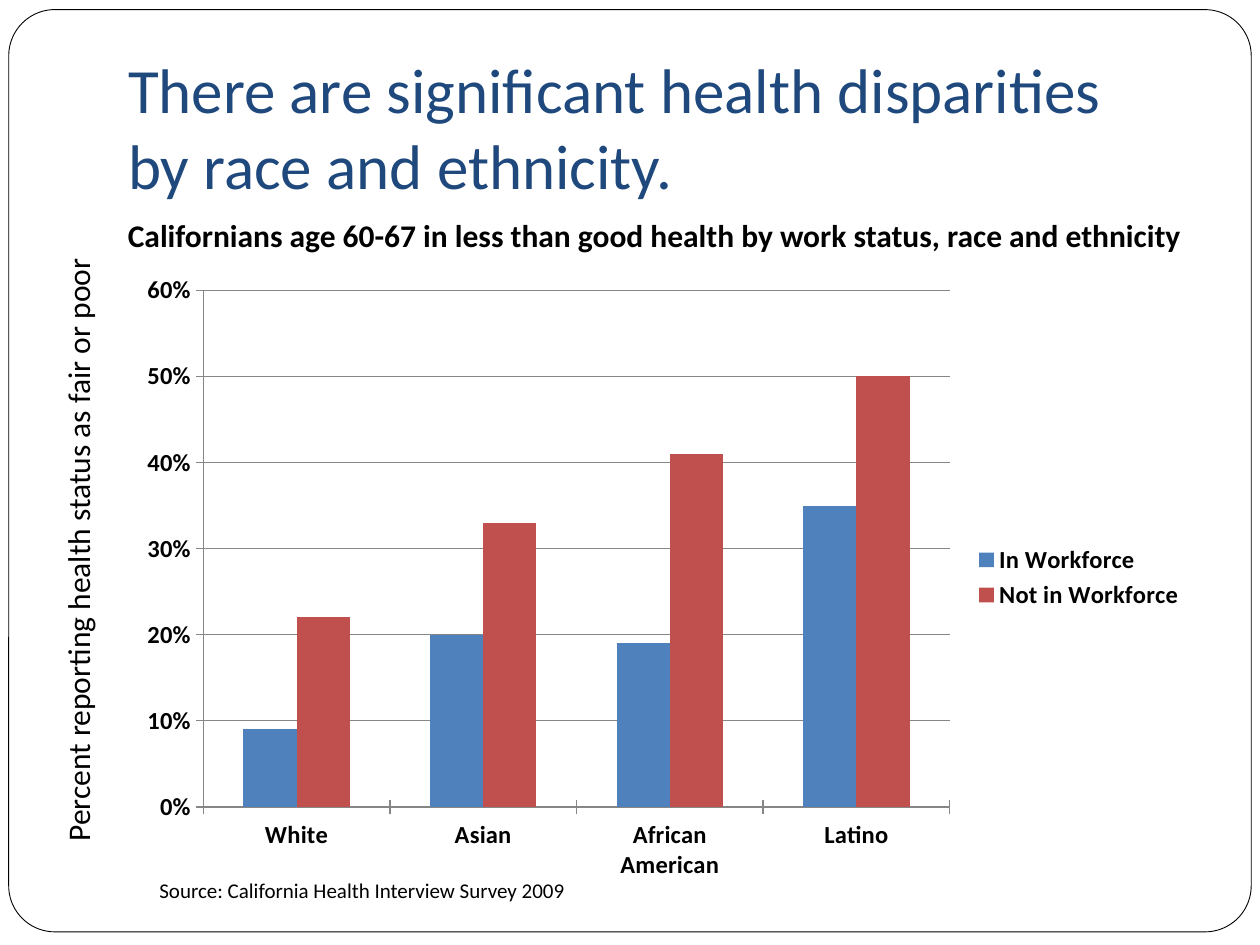
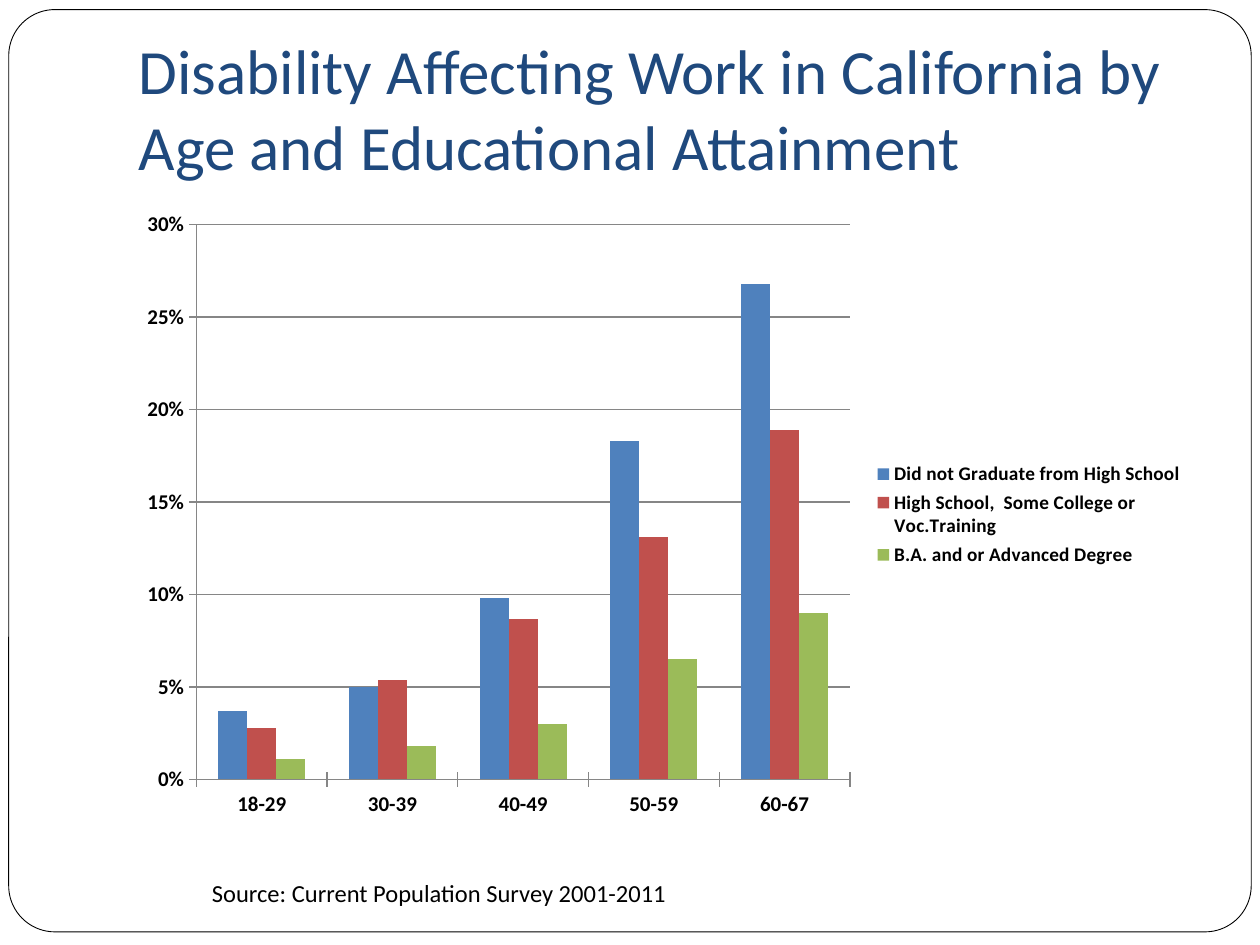
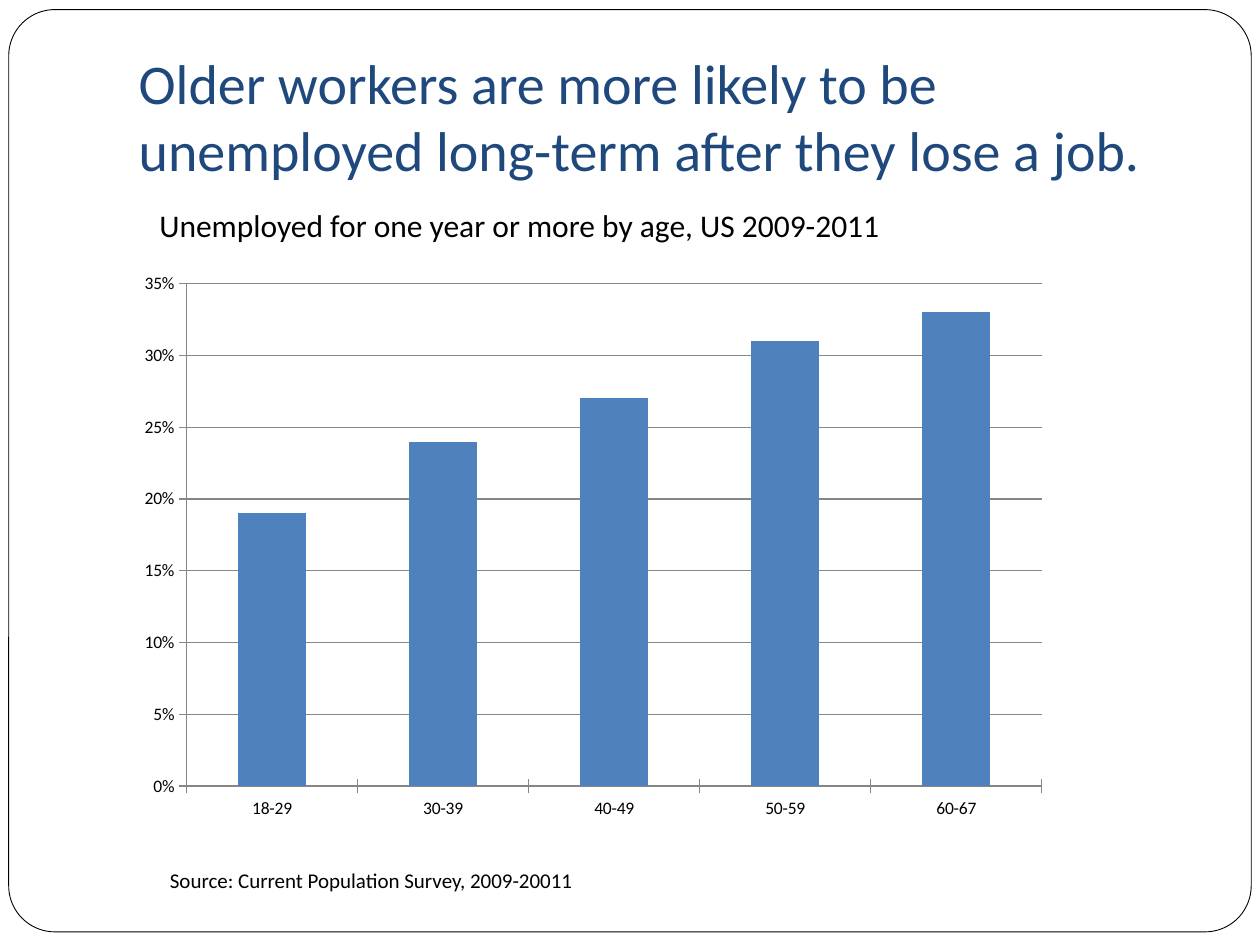
from pptx import Presentation
from pptx.chart.data import CategoryChartData
from pptx.dml.color import RGBColor
from pptx.enum.chart import XL_CHART_TYPE, XL_LEGEND_POSITION, XL_TICK_MARK
from pptx.enum.shapes import MSO_SHAPE
from pptx.enum.text import MSO_ANCHOR, MSO_AUTO_SIZE, PP_ALIGN
from pptx.util import Pt

COLUMNS = XL_CHART_TYPE.COLUMN_CLUSTERED
LEGEND_RIGHT = XL_LEGEND_POSITION.RIGHT
TICK_CROSS = XL_TICK_MARK.CROSS
ROUNDED = MSO_SHAPE.ROUNDED_RECTANGLE
BOTTOM = MSO_ANCHOR.BOTTOM
FIXED_SIZE = MSO_AUTO_SIZE.NONE
GROW = MSO_AUTO_SIZE.SHAPE_TO_FIT_TEXT
LEFT = PP_ALIGN.LEFT

TITLE_ONLY = 5
FRAME_ID = 20
FONT = "Calibri"
COLORS = {
    "paper": "FFFFFF",
    "ink": "000000",
    "title": "1F497D",
    "grid": "868686",
    "blue": "4F81BD",
    "red": "C0504D",
    "green": "9BBB59",
}
SERIES_COLORS = ("blue", "red", "green")
AGE_GROUPS = ("18-29", "30-39", "40-49", "50-59", "60-67")
TITLE_BOX = (72, 21.6, 612, 90)


def color(name):
    return RGBColor.from_string(COLORS[name])


def points(box):
    return [Pt(length) for length in box]


def style_font(font, size, bold=False, color_name="ink"):
    font.name = FONT
    font.size = Pt(size)
    font.bold = bold
    font.color.rgb = color(color_name)


def write(text_frame, text, size=18, bold=False, color_name="ink"):
    paragraph = text_frame.paragraphs[0]
    paragraph.alignment = LEFT
    run = paragraph.add_run()
    run.text = text
    style_font(run.font, size, bold, color_name)


class Deck:
    def __init__(self):
        self.presentation = Presentation()
        self.presentation.slide_width = Pt(720)
        self.presentation.slide_height = Pt(540)
        self.layout = self.presentation.slide_layouts[TITLE_ONLY]
        self.slide = None

    def add_slide(self, title, box=TITLE_BOX, size=36):
        is_first = self.slide is None
        self.slide = self.presentation.slides.add_slide(self.layout)
        if is_first:
            self.add_frame_to_layout()
        shape = self.slide.shapes.title
        shape.left, shape.top, shape.width, shape.height = points(box)
        text_frame = shape.text_frame
        text_frame.word_wrap = True
        text_frame.auto_size = FIXED_SIZE
        text_frame.vertical_anchor = BOTTOM
        text_frame.margin_bottom = Pt(7.2)
        write(text_frame, title, size=size, color_name="title")

    def add_frame_to_layout(self):
        frame = self.slide.shapes.add_shape(ROUNDED, *points((5, 5.5, 710, 527)))
        frame.adjustments[0] = 0.05
        frame.shadow.inherit = False
        frame.fill.solid()
        frame.fill.fore_color.rgb = color("paper")
        frame.line.color.rgb = color("ink")
        frame.line.width = Pt(0.5)
        frame.element.nvSpPr.cNvPr.id = FRAME_ID
        self.layout.shapes.element.insert(2, frame.element)

    def add_text(self, text, box, upward=False, **text_format):
        text_frame = self.slide.shapes.add_textbox(*points(box)).text_frame
        text_frame.word_wrap = False
        text_frame.auto_size = GROW
        if upward:
            text_frame._txBody.bodyPr.set("vert", "vert270")
        write(text_frame, text, **text_format)

    def add_chart(self, box, categories, series, maximum, step, size, bold=False, legend_size=None):
        data = CategoryChartData(number_format="0%")
        data.categories = categories
        for name, values in series.items():
            data.add_series(name, values)
        chart = self.slide.shapes.add_chart(COLUMNS, *points(box), data).chart
        chart.has_title = False
        style_font(chart.font, size, bold)

        plot = chart.plots[0]
        plot.gap_width = 150
        plot.overlap = 0
        plot.vary_by_categories = False
        for column, color_name in zip(plot.series, SERIES_COLORS):
            column.format.fill.solid()
            column.format.fill.fore_color.rgb = color(color_name)

        value_axis = chart.value_axis
        value_axis.minimum_scale = 0
        value_axis.maximum_scale = maximum
        value_axis.major_unit = step
        value_axis.has_major_gridlines = True
        value_axis.tick_labels.number_format = "0%"
        value_axis.tick_labels.number_format_is_linked = False
        for axis in (chart.category_axis, value_axis):
            axis.major_tick_mark = TICK_CROSS
            style_font(axis.tick_labels.font, size, bold)
        for part in (chart.category_axis, value_axis, value_axis.major_gridlines):
            part.format.line.color.rgb = color("grid")
            part.format.line.width = Pt(0.75)

        chart.has_legend = legend_size is not None
        if chart.has_legend:
            chart.legend.position = LEGEND_RIGHT
            chart.legend.include_in_layout = False
            style_font(chart.legend.font, legend_size, bold)


def add_health_disparities(deck):
    deck.add_slide("There are significant health disparities by race and ethnicity.",
                   box=(66, 60, 612, 62.5))
    deck.add_chart(
        (72, 150, 612, 360),
        ("White", "Asian", "African American", "Latino"),
        {"In Workforce": (0.09, 0.2, 0.19, 0.35),
         "Not in Workforce": (0.22, 0.33, 0.41, 0.5)},
        maximum=0.6, step=0.1, size=14, bold=True, legend_size=14)
    deck.add_text("Source: California Health Interview Survey 2009",
                  (84, 498, 248.5, 21.6), size=12)
    deck.add_text("Californians age 60-67 in less than good health by work status, race and ethnicity",
                  (66, 120, 617, 29), bold=True)
    deck.add_text("Percent reporting health status as fair or poor",
                  (30, 144, 36, 344), upward=True)


def add_disability(deck):
    deck.add_slide("Disability Affecting Work in California by Age and Educational Attainment")
    deck.add_chart(
        (72, 114, 612, 360),
        AGE_GROUPS,
        {"Did not Graduate from High School": (0.037, 0.05, 0.098, 0.183, 0.268),
         "High School,  Some College or Voc.Training": (0.028, 0.054, 0.087, 0.131, 0.189),
         "B.A. and or Advanced Degree": (0.011, 0.018, 0.03, 0.065, 0.09)},
        maximum=0.3, step=0.05, size=12, bold=True, legend_size=11)
    deck.add_text("Source: Current Population Survey 2001-2011",
                  (114, 498, 276.5, 24.5), size=14)


def add_unemployment(deck):
    deck.add_slide("Older workers are more likely to be unemployed long-term after they lose a job.",
                   size=32)
    deck.add_text("Source: Current Population Survey, 2009-20011",
                  (90, 492, 247, 21.6), size=12)
    deck.add_chart(
        (72, 150, 534, 324),
        AGE_GROUPS,
        {"Series 1": (0.19, 0.24, 0.27, 0.31, 0.33)},
        maximum=0.35, step=0.05, size=10)
    deck.add_text("Unemployed for one year or more by age, US 2009-2011",
                  (84, 114, 431, 29))


def main():
    deck = Deck()
    add_health_disparities(deck)
    add_disability(deck)
    add_unemployment(deck)
    deck.presentation.save("out.pptx")


if __name__ == "__main__":
    main()
